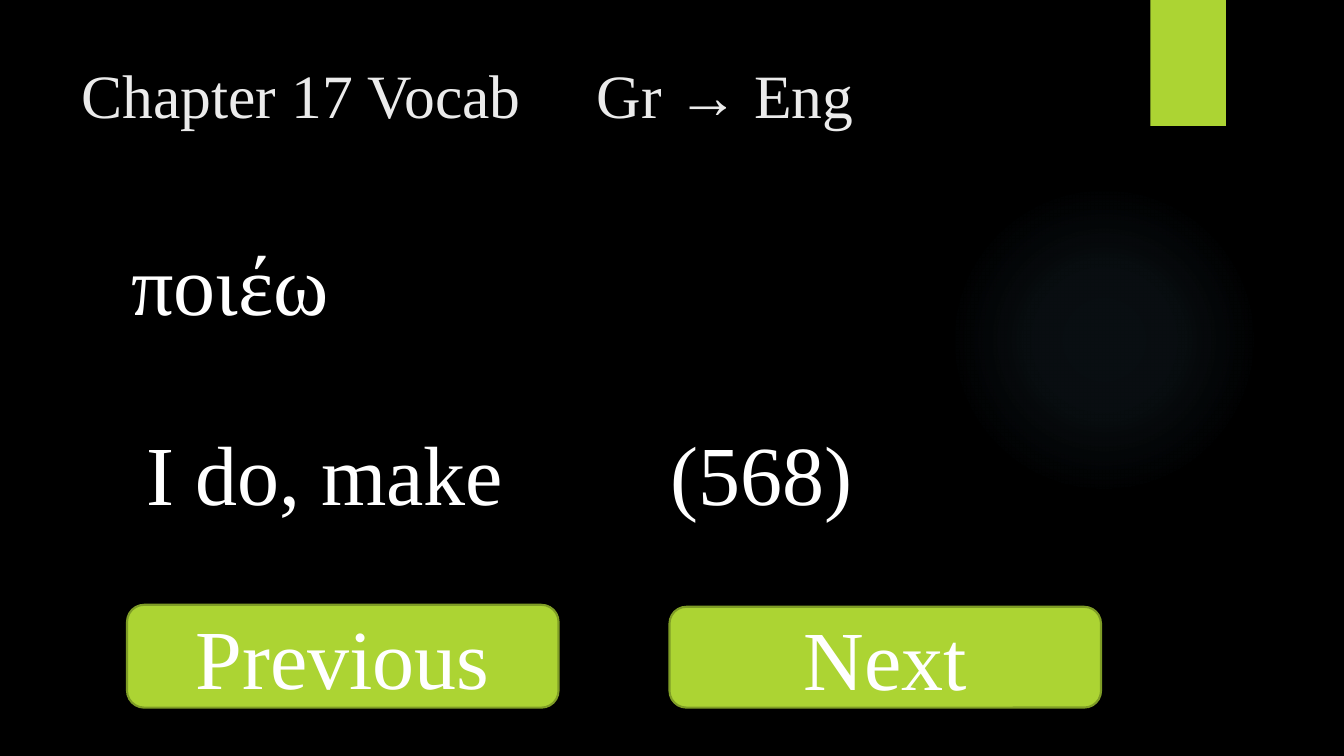
from pptx import Presentation
from pptx.dml.color import RGBColor
from pptx.enum.shapes import MSO_SHAPE
from pptx.enum.text import MSO_ANCHOR, MSO_AUTO_SIZE, PP_ALIGN
from pptx.oxml import parse_xml
from pptx.oxml.ns import nsdecls
from pptx.util import Inches, Pt

BLACK = RGBColor(0x00, 0x00, 0x00)
WHITE = RGBColor(0xFF, 0xFF, 0xFF)
PALE = RGBColor(0xEB, 0xEB, 0xEB)
LIME = RGBColor(0xAC, 0xD4, 0x33)
OLIVE = RGBColor(0x7F, 0x9D, 0x26)
NS = nsdecls("a")


def write(shape, text, size=60, color=WHITE, align=PP_ALIGN.LEFT,
          anchor=MSO_ANCHOR.TOP, tab=None, plain=False):
    frame = shape.text_frame
    frame.word_wrap = True
    frame.auto_size = MSO_AUTO_SIZE.NONE
    frame.vertical_anchor = anchor
    para = frame.paragraphs[0]
    para.text = text
    para.alignment = align
    para.space_before = Pt(0)
    props = para._p.get_or_add_pPr()
    if plain:
        props.set("marL", "0")
        props.set("indent", "0")
        props.append(parse_xml(f"<a:buNone {NS}/>"))
    if tab:
        props.append(parse_xml(
            f'<a:tabLst {NS}><a:tab pos="{Inches(tab)}" algn="l"/></a:tabLst>'))
    font = para.font
    font.name = "Times New Roman"
    font.size = Pt(size)
    font.color.rgb = color


def place(shape, *box):
    shape.left, shape.top, shape.width, shape.height = map(Inches, box)


deck = Presentation()
deck.slide_width, deck.slide_height = Inches(13.33), Inches(7.5)
slide = deck.slides.add_slide(deck.slide_layouts[1])
slide.background.fill.solid()
slide.background.fill.fore_color.rgb = BLACK
shapes = slide.shapes

# Soft glow on the right
glow = shapes.add_shape(MSO_SHAPE.OVAL, Inches(9.41), Inches(1.83),
                        Inches(3.08), Inches(3.08))
glow.shadow.inherit = False
glow.line.fill.background()
stops = "".join(
    f'<a:gs pos="{pos * 1000}"><a:srgbClr val="7AC4F0">'
    f'<a:alpha val="{alpha * 1000}"/></a:srgbClr></a:gs>'
    for pos, alpha in ((0, 7), (36, 6), (69, 0)))
glow._element.spPr.insert(2, parse_xml(
    f'<a:gradFill {NS} rotWithShape="1"><a:gsLst>{stops}</a:gsLst>'
    '<a:path path="circle"><a:fillToRect l="50000" t="50000" r="50000" b="50000"/>'
    '</a:path></a:gradFill>'))

# Green tab at the top, with a drop shadow
flag = shapes.add_shape(MSO_SHAPE.RECTANGLE, Inches(11.41), 0,
                        Inches(0.75), Inches(1.25))
flag.fill.solid()
flag.fill.fore_color.rgb = LIME
flag.line.fill.background()
flag.shadow.inherit = False
flag._element.spPr.effectLst.append(parse_xml(
    f'<a:outerShdw {NS} blurRad="{Pt(3)}" dist="{Pt(2)}" dir="5400000" '
    'rotWithShape="0"><a:srgbClr val="000000"><a:alpha val="45000"/>'
    '</a:srgbClr></a:outerShdw>'))

# Title
title = shapes.title
place(title, 0.71, 0.5, 8.32, 0.96)
write(title, "Chapter 17 Vocab\tGr → Eng", size=44, color=PALE, tab=5.11)
title.text_frame.margin_top = Inches(0.06)

# Greek word
word = slide.placeholders[1]
place(word, 1.2, 2.25, 9.78, 1.55)
write(word, "ποιέω", plain=True)
word.text_frame.margin_top = Inches(0.05)

# Meaning and count
gloss = shapes.add_textbox(Inches(1.35), Inches(4.13), Inches(7.28), Inches(1.11))
write(gloss, "I do, make\t(568)", tab=5.2)

# Buttons
for text, left, top, high in (("Previous", 1.26, 6, 1.02), ("Next", 6.64, 6.02, 1)):
    key = shapes.add_shape(MSO_SHAPE.ROUNDED_RECTANGLE, Inches(left), Inches(top),
                           Inches(4.28), Inches(high))
    key.shadow.inherit = False
    key.fill.solid()
    key.fill.fore_color.rgb = LIME
    key.line.color.rgb = OLIVE
    key.line.width = Pt(1.5)
    write(key, text, align=PP_ALIGN.CENTER, anchor=MSO_ANCHOR.MIDDLE)

deck.save("out.pptx")
